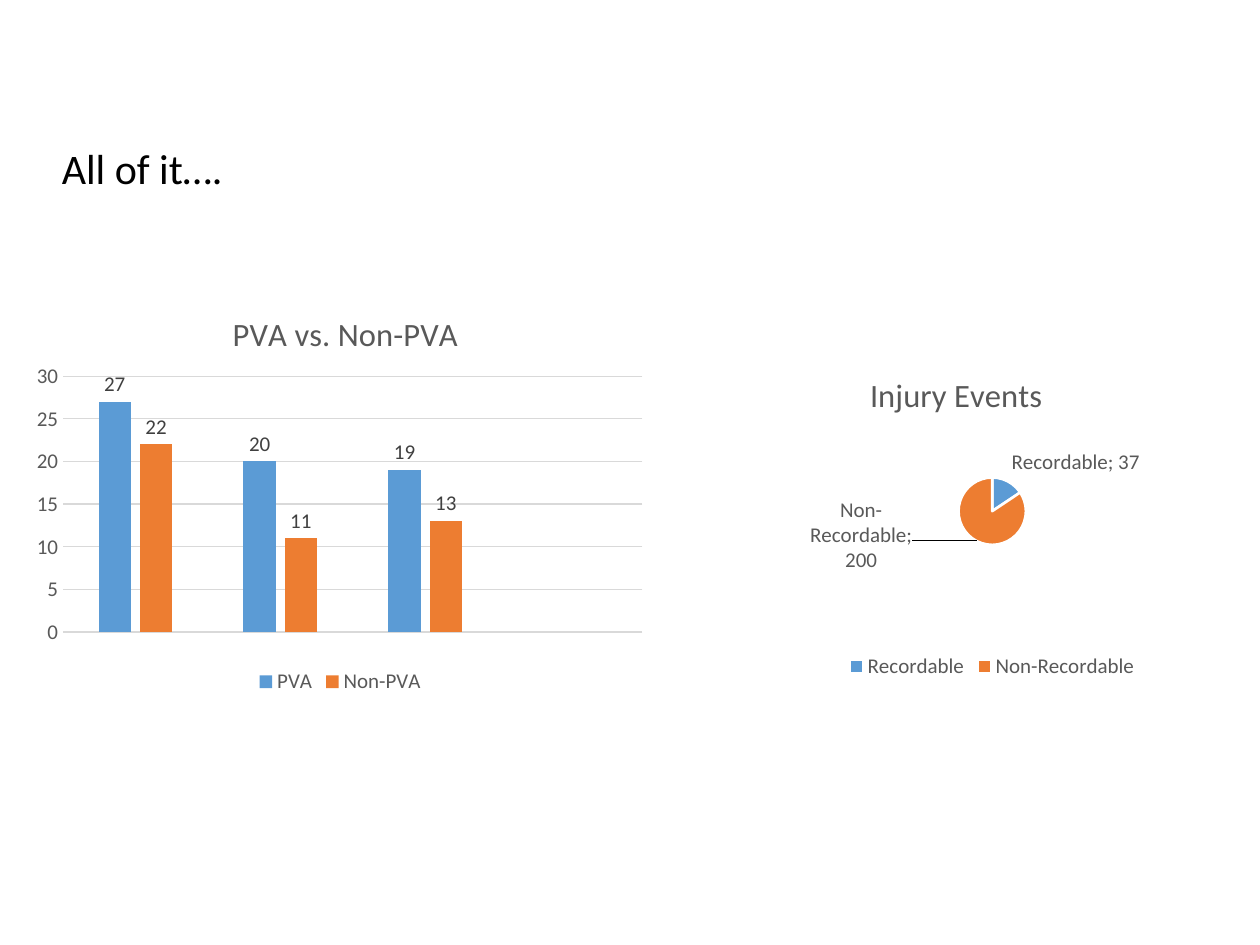
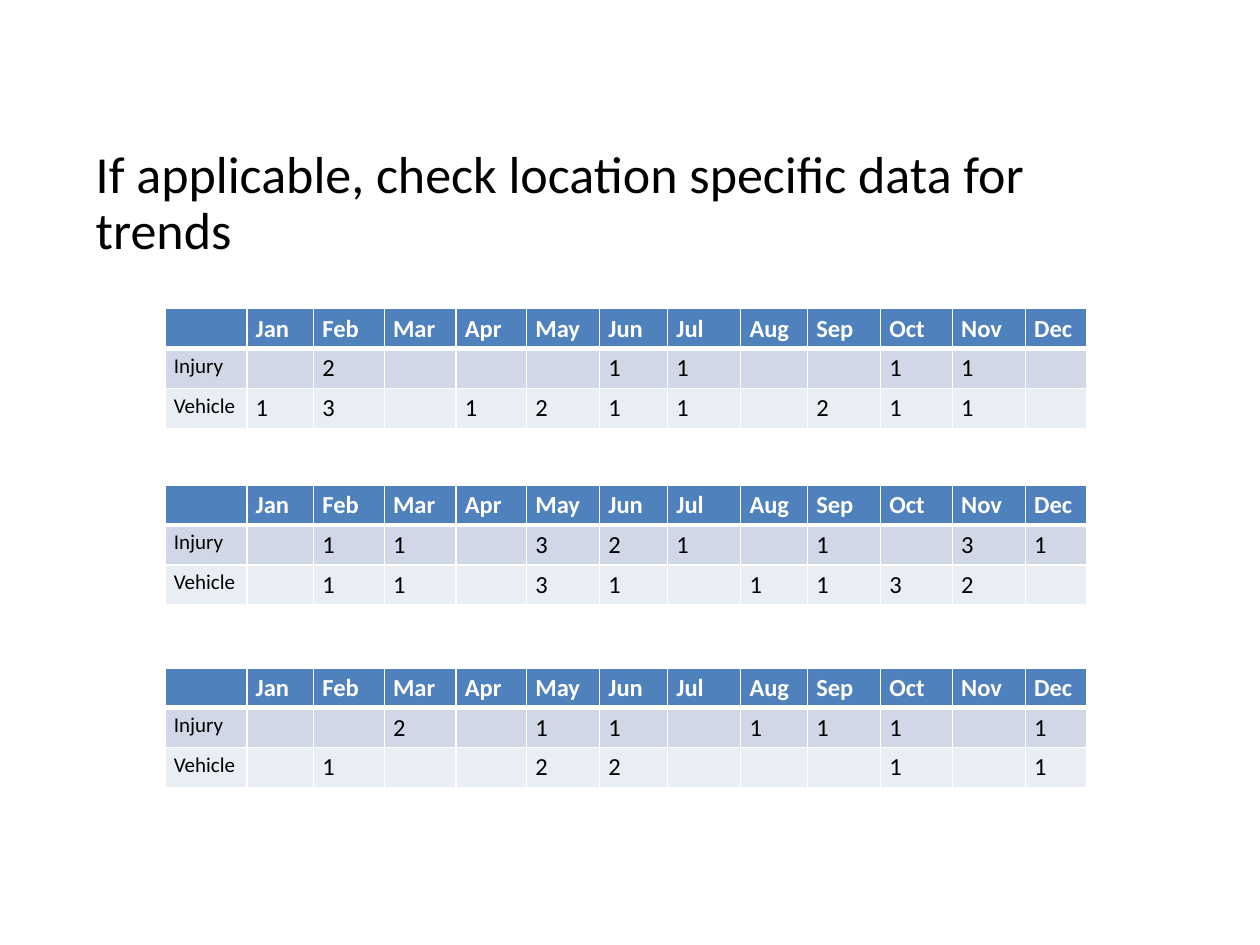
from lxml.etree import SubElement
from pptx import Presentation
from pptx.chart.data import CategoryChartData
from pptx.dml.color import RGBColor
from pptx.enum.chart import XL_CHART_TYPE as CT, XL_LABEL_POSITION as LP
from pptx.enum.chart import XL_LEGEND_POSITION, XL_TICK_MARK
from pptx.enum.text import MSO_ANCHOR, MSO_AUTO_SIZE, PP_ALIGN
from pptx.oxml import parse_xml
from pptx.oxml.ns import nsdecls, qn
from pptx.util import Inches, Pt

FONT = "Calibri"
BLACK = RGBColor(0x00, 0x00, 0x00)
WHITE = RGBColor(0xFF, 0xFF, 0xFF)
GREY = RGBColor(0x59, 0x59, 0x59)
DARK_GREY = RGBColor(0x40, 0x40, 0x40)
GRID = RGBColor(0xD9, 0xD9, 0xD9)
BLUE = RGBColor(0x5B, 0x9B, 0xD5)
ORANGE = RGBColor(0xED, 0x7D, 0x31)
HEADER = RGBColor(0x4F, 0x81, 0xBD)
BAND_DARK = RGBColor(0xD0, 0xD8, 0xE8)
BAND_LIGHT = RGBColor(0xE9, 0xED, 0xF4)

MONTHS = "Jan Feb Mar Apr May Jun Jul Aug Sep Oct Nov Dec".split()
COL_WIDTHS = [0.65, 0.53, 0.56, 0.57, 0.56, 0.58, 0.54,
              0.58, 0.53, 0.58, 0.57, 0.58, 0.49]
ROW_HEIGHT = 0.3
LOCATIONS = [
    (2.45, {"Injury": {"Feb": 2, "Jun": 1, "Jul": 1, "Oct": 1, "Nov": 1},
            "Vehicle": {"Jan": 1, "Feb": 3, "Apr": 1, "May": 2, "Jun": 1,
                        "Jul": 1, "Sep": 2, "Oct": 1, "Nov": 1}}),
    (3.85, {"Injury": {"Feb": 1, "Mar": 1, "May": 3, "Jun": 2, "Jul": 1,
                       "Sep": 1, "Nov": 3, "Dec": 1},
            "Vehicle": {"Feb": 1, "Mar": 1, "May": 3, "Jun": 1, "Aug": 1,
                        "Sep": 1, "Oct": 3, "Nov": 2}}),
    (5.3, {"Injury": {"Mar": 2, "May": 1, "Jun": 1, "Aug": 1, "Sep": 1,
                      "Oct": 1, "Dec": 1},
           "Vehicle": {"Feb": 1, "May": 2, "Jun": 2, "Oct": 1, "Dec": 1}}),
]


def style_font(font, size, color, bold=False):
    """Set the shared typeface with a size, colour and weight."""
    font.name, font.size, font.bold = FONT, Pt(size), bold
    font.color.rgb = color


def add_titled_slide(prs, text, box, size, anchor, spacing):
    """Add a title-only slide and format its title in the given box."""
    s = prs.slides.add_slide(prs.slide_layouts[5])
    sp = s.shapes.title
    sp.left, sp.top, sp.width, sp.height = map(Inches, box)
    tf = sp.text_frame
    tf.word_wrap, tf.auto_size = True, MSO_AUTO_SIZE.NONE
    tf.vertical_anchor = anchor
    p = tf.paragraphs[0]
    p.alignment, p.line_spacing = PP_ALIGN.LEFT, spacing
    r = p.add_run()
    r.text = text
    style_font(r.font, size, BLACK)
    return s


def manual_layout(inner=False, **fractions):
    """Return a chart layout element from fractions of the chart size."""
    target = '<c:layoutTarget val="inner"/>' if inner else ""
    modes = "".join(f'<c:{k}Mode val="edge"/>' for k in "xy") if inner else ""
    sizes = "".join(f'<c:{k} val="{v}"/>' for k, v in fractions.items())
    return parse_xml(f'<c:layout {nsdecls("c")}><c:manualLayout>{target}{modes}'
                     f'{sizes}</c:manualLayout></c:layout>')


def set_plot_area(chart, x, y, w, h):
    """Fix the inner plot area of a chart."""
    area = chart._chartSpace.chart.plotArea
    for old in area.findall(qn("c:layout")):
        area.remove(old)
    area.insert(0, manual_layout(True, x=x, y=y, w=w, h=h))


def add_titled_chart(s, kind, data, box, title, title_at):
    """Add a chart with the shared title and bottom legend."""
    chart = s.shapes.add_chart(kind, *map(Inches, box), data).chart
    style_font(chart.font, 10, BLACK)
    r = chart.chart_title.text_frame.paragraphs[0].add_run()
    r.text = title
    style_font(r.font, 18.6, GREY)
    x, y = title_at
    c_title = chart.chart_title._element
    for old in c_title.findall(qn("c:layout")):
        c_title.remove(old)
    c_title.find(qn("c:tx")).addnext(manual_layout(True, x=x, y=y))
    chart.has_legend = True
    chart.legend.position = XL_LEGEND_POSITION.BOTTOM
    chart.legend.include_in_layout = False
    style_font(chart.legend.font, 12, GREY)
    return chart


def add_pva_chart(s, box):
    """Add the clustered columns of PVA and non-PVA counts."""
    data = CategoryChartData()
    data.categories = ["1", "2", "3", "4"]
    data.add_series("PVA", [27, 20, 19, None])
    data.add_series("Non-PVA", [22, 11, 13, None])
    chart = add_titled_chart(s, CT.COLUMN_CLUSTERED, data, box,
                             "PVA vs. Non-PVA", (0.32, 0.06))
    set_plot_area(chart, 0.06, 0.23, 0.92, 0.61)
    plot = chart.plots[0]
    plot.gap_width, plot.overlap, plot.vary_by_categories = 219, -27, False
    for series, color in zip(plot.series, (BLUE, ORANGE)):
        series.format.fill.solid()
        series.format.fill.fore_color.rgb = color
        labels = series.data_labels
        labels.show_value, labels.position = True, LP.OUTSIDE_END
        style_font(labels.font, 12, DARK_GREY)
    chart.category_axis.visible = False
    axis = chart.value_axis
    axis.minimum_scale, axis.maximum_scale, axis.major_unit = 0, 30, 5
    axis.major_tick_mark = XL_TICK_MARK.NONE
    axis.format.line.fill.background()
    line = axis.major_gridlines.format.line
    line.color.rgb, line.width = GRID, Pt(0.75)
    style_font(axis.tick_labels.font, 12, GREY)


def add_injury_chart(s, box):
    """Add the pie of recordable and non-recordable injuries."""
    data = CategoryChartData()
    data.categories = ["Recordable", "Non-Recordable"]
    data.add_series("Injury Events", [37, 200])
    chart = add_titled_chart(s, CT.PIE, data, box, "Injury Events", (0.31, 0.1))
    set_plot_area(chart, 0.45, 0.41, 0.1, 0.2)
    plot = chart.plots[0]
    plot.vary_by_categories = True
    series = plot.series[0]
    for i, color in enumerate((BLUE, ORANGE)):
        fmt = series.points[i].format
        fmt.fill.solid()
        fmt.fill.fore_color.rgb = color
        fmt.line.color.rgb, fmt.line.width = WHITE, Pt(1.5)
    labels = series.data_labels
    labels.show_value = labels.show_category_name = True
    labels.position = LP.OUTSIDE_END
    style_font(labels.font, 12, GREY)
    label = series.points[1].data_label
    style_font(label.font, 12, GREY)
    label.position = LP.OUTSIDE_END
    d_lbl = labels._element.find(qn("c:dLbl"))
    d_lbl.find(qn("c:idx")).addnext(manual_layout(x=-0.09, y=-0.14))
    for element in (d_lbl, labels._element):
        for name, on in (("Val", 1), ("CatName", 1), ("LegendKey", 0),
                         ("SerName", 0), ("Percent", 0)):
            element.find(qn(f"c:show{name}")).set("val", str(on))
        separator = parse_xml(f'<c:separator {nsdecls("c")}>; </c:separator>')
        last = element.find(qn("c:showBubbleSize"))
        if last is None:
            last = element.find(qn("c:showPercent"))
        last.addnext(separator)


def format_cell(cell, text, size, color, bold, fill, top, bottom):
    """Write one table cell with its fill, insets and white borders."""
    cell.margin_left = cell.margin_right = Inches(0.07)
    cell.margin_top = cell.margin_bottom = Inches(0.04)
    p = cell.text_frame.paragraphs[0]
    if text:
        r = p.add_run()
        r.text = text
        style_font(r.font, size, color, bold)
    else:
        SubElement(p._p, qn("a:endParaRPr"), sz=str(size * 100))
    tc_pr = cell._tc.get_or_add_tcPr()
    for side, width in zip("LRTB", (1, 1, top, bottom)):
        ln = SubElement(tc_pr, qn(f"a:ln{side}"), w=str(Pt(width)))
        SubElement(SubElement(ln, qn("a:solidFill")), qn("a:srgbClr"),
                   val=str(WHITE))
    cell.fill.solid()
    cell.fill.fore_color.rgb = fill


def add_location_table(s, left, top, counts):
    """Add one location's monthly injury and vehicle counts."""
    rows = [[""] + MONTHS]
    rows += [[name] + [str(by_month.get(m, "")) for m in MONTHS]
             for name, by_month in counts.items()]
    tbl = s.shapes.add_table(
        len(rows), len(COL_WIDTHS), Inches(left), Inches(top),
        Inches(sum(COL_WIDTHS)), Inches(ROW_HEIGHT * len(rows))).table
    for col, width in zip(tbl.columns, COL_WIDTHS):
        col.width = Inches(width)
    looks = [(WHITE, True, HEADER, 1, 3), (BLACK, False, BAND_DARK, 3, 1),
             (BLACK, False, BAND_LIGHT, 1, 1)]
    for i, (row, look) in enumerate(zip(rows, looks)):
        tbl.rows[i].height = Inches(ROW_HEIGHT)
        for j, text in enumerate(row):
            format_cell(tbl.cell(i, j), text, 14 if j else 12, *look)


def build_charts_slide(prs):
    """Build the slide with the two summary charts."""
    s = add_titled_slide(prs, "All of it….", (0.39, 1.08, 3.96, 0.5), 24,
                         MSO_ANCHOR.TOP, 1.0)
    add_injury_chart(s, (5.2, 2.63, 5.35, 2.8))
    add_pva_chart(s, (0.2, 2.22, 5, 3.33))


def build_locations_slide(prs):
    """Build the slide with one table for each location."""
    s = add_titled_slide(
        prs, "If applicable, check location specific data for trends",
        (0.66, 1.08, 8.62, 1.09), 29.7, MSO_ANCHOR.MIDDLE, 0.9)
    for top, counts in LOCATIONS:
        add_location_table(s, 1.31, top, counts)


def main():
    """Build and save the presentation."""
    prs = Presentation()
    prs.slide_width, prs.slide_height = Inches(10), Inches(7.5)
    build_charts_slide(prs)
    build_locations_slide(prs)
    prs.save("out.pptx")


if __name__ == "__main__":
    main()
